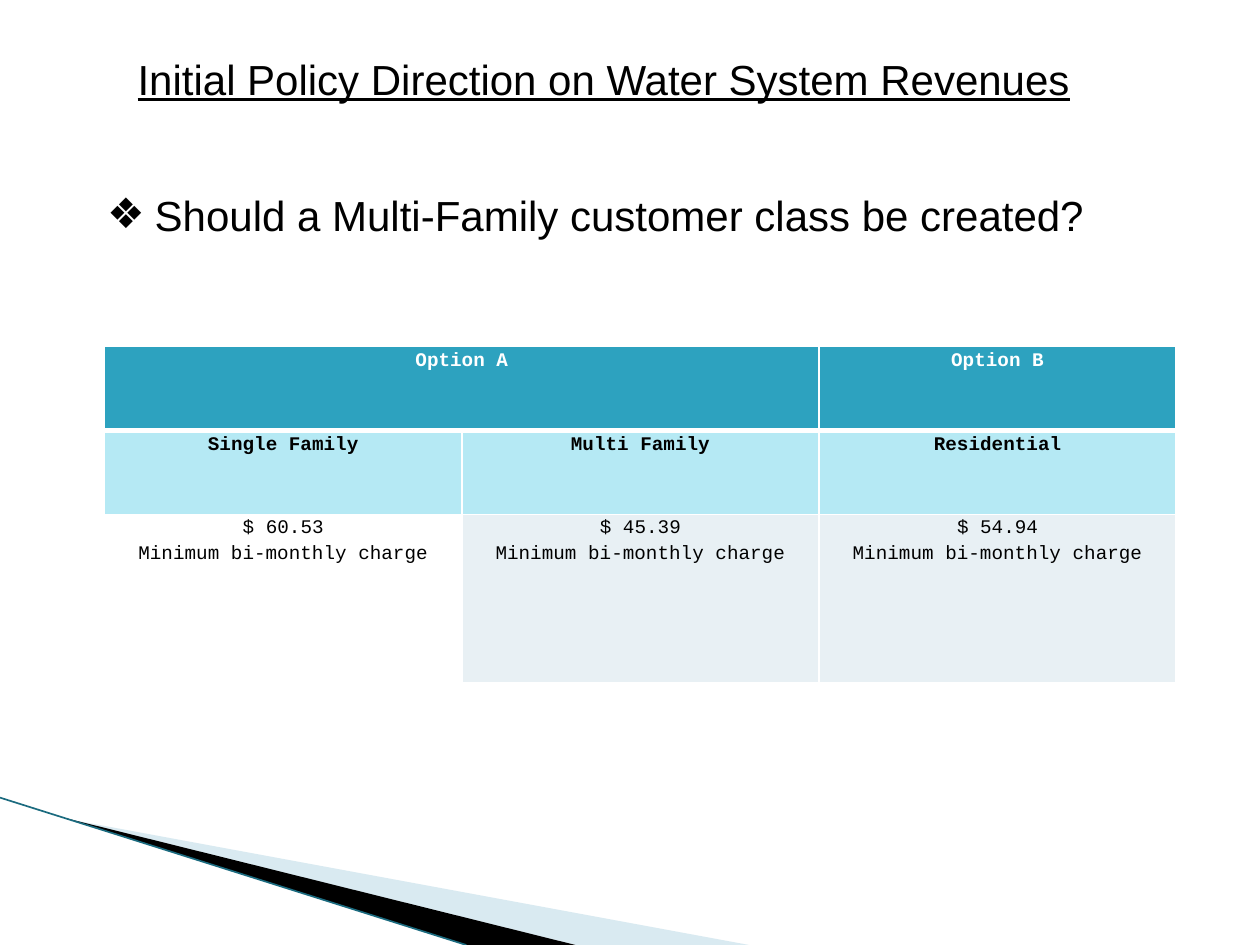
import pptx
import pptx.dml.color
import pptx.enum.shapes
import pptx.enum.text
import pptx.oxml
import pptx.oxml.ns
import pptx.util
from pptx.util import Cm

COLORS = {
    "text": "000000",
    "white": "FFFFFF",
    "header": "2DA2BF",
    "subheader": "B5E9F4",
    "body": "E8F0F4",
    "pale_wedge": "A0CBDC",
    "dark_wedge": "000000",
    "edge": "1B6B7F",
}
CENTER = pptx.enum.text.PP_ALIGN.CENTER
HEADING = {"name": "Arial", "size": pptx.util.Pt(24)}
CELL_FONT = {"name": "Courier New", "size": pptx.util.Pt(11)}
CELL_PARAGRAPH = {"alignment": CENTER, "line_spacing": 1.15}
CELL_FRAME = {
    "margin_left": Cm(0.18), "margin_right": Cm(0.18),
    "margin_top": 0, "margin_bottom": 0,
}
CHARGE = "Minimum bi-monthly charge"


def rgb(name):
    return pptx.dml.color.RGBColor.from_string(COLORS[name])


def apply_format(target, values):
    for attribute, value in values.items():
        setattr(target, attribute, value)


def add_xml(parent, tag, **attributes):
    element = pptx.oxml.parse_xml(f"<a:{tag} {pptx.oxml.ns.nsdecls('a')}/>")
    for key, value in attributes.items():
        element.set(key, str(value))
    parent.append(element)
    return element


def write_paragraph(paragraph, text, font, color, **extra):
    paragraph.add_run().text = text
    run_font = paragraph.runs[0].font
    apply_format(run_font, {**font, **extra})
    run_font.color.rgb = rgb(color)


def add_wedge(slide, points, color, opacity=100):
    corners = [(Cm(x), Cm(y)) for x, y in points]
    builder = slide.shapes.build_freeform(*corners[0], scale=1.0)
    builder.add_line_segments(corners[1:], close=True)
    shape = builder.convert_to_shape()
    shape.shadow.inherit = False
    shape.fill.solid()
    shape.fill.fore_color.rgb = rgb(color)
    shape.line.fill.background()
    if opacity < 100:
        fill_color = shape.fill._xPr.find(".//" + pptx.oxml.ns.qn("a:srgbClr"))
        add_xml(fill_color, "alpha", val=opacity * 1000)


def add_edge(slide, start, end):
    connector = slide.shapes.add_connector(
        pptx.enum.shapes.MSO_CONNECTOR.STRAIGHT, *map(Cm, start + end))
    connector.line.color.rgb = rgb("edge")
    connector.line.width = pptx.util.Pt(0.95)
    add_xml(connector._element.spPr, "effectLst")


def add_heading(slide):
    box = slide.shapes.add_textbox(Cm(0.64), Cm(0.84), Cm(23.06), Cm(5.05))
    frame = box.text_frame
    apply_format(frame, {"word_wrap": True, "margin_top": Cm(0.23)})

    title = frame.paragraphs[0]
    title.alignment = CENTER
    write_paragraph(title, "Initial Policy Direction on Water System Revenues",
                    HEADING, "text", underline=True)

    question = frame.add_paragraph()
    apply_format(question, {"level": 1, "space_before": pptx.util.Pt(49)})
    properties = question._p.get_or_add_pPr()
    properties.set("marL", str(Cm(2.23)))
    properties.set("indent", str(Cm(-0.96)))
    add_xml(properties, "buFont", typeface="Arial")
    add_xml(properties, "buChar", char="❖")
    write_paragraph(question, "Should a Multi-Family customer class be created?",
                    HEADING, "text")


def set_borders(cell, bottom_width):
    properties = cell._tc.get_or_add_tcPr()
    widths = {"lnL": 1, "lnR": 1, "lnT": 1, "lnB": bottom_width}
    for position, (side, width) in enumerate(widths.items()):
        border = add_xml(properties, side, w=pptx.util.Pt(width))
        add_xml(add_xml(border, "solidFill"), "srgbClr", val=COLORS["white"])
        properties.insert(position, border)


def format_cell(cell, lines, fill, color="text", bold=False, bottom_width=1):
    apply_format(cell, CELL_FRAME)
    if fill:
        cell.fill.solid()
        cell.fill.fore_color.rgb = rgb(fill)
    else:
        cell.fill.background()
    set_borders(cell, bottom_width)
    frame = cell.text_frame
    for index, line in enumerate(lines):
        paragraph = frame.add_paragraph() if index else frame.paragraphs[0]
        apply_format(paragraph, CELL_PARAGRAPH)
        write_paragraph(paragraph, line, CELL_FONT, color, bold=bold)


def add_options_table(slide):
    table = slide.shapes.add_table(
        3, 3, Cm(2.11), Cm(6.99), Cm(21.6), Cm(6.78)).table
    for column in table.columns:
        column.width = Cm(7.2)
    for row, height in zip(table.rows, (1.69, 1.69, 3.4)):
        row.height = Cm(height)

    header = {"fill": "header", "color": "white", "bold": True, "bottom_width": 3}
    table.cell(0, 0).merge(table.cell(0, 1))
    for column, text in enumerate(("Option A", None, "Option B")):
        format_cell(table.cell(0, column), [text] if text else [], **header)

    classes = [
        ("Single Family", "$ 60.53", None),
        ("Multi Family", "$ 45.39", "body"),
        ("Residential", "$ 54.94", "body"),
    ]
    for column, (name, price, fill) in enumerate(classes):
        format_cell(table.cell(1, column), [name], "subheader", bold=True)
        format_cell(table.cell(2, column), [price, CHARGE], fill)


def main():
    presentation = pptx.Presentation()
    apply_format(presentation, {"slide_width": Cm(25.4), "slide_height": Cm(19.05)})
    slide = presentation.slides.add_slide(presentation.slide_layouts[6])

    add_wedge(slide, [(1.4, 16.52), (15.1, 19.05), (11.6, 19.05)], "pale_wedge", 40)
    add_wedge(slide, [(1.35, 16.5), (11.6, 19.05), (9.4, 19.05)], "dark_wedge")
    add_edge(slide, (0, 16.08), (9.4, 19.05))
    add_heading(slide)
    add_options_table(slide)
    presentation.save("out.pptx")


if __name__ == "__main__":
    main()
